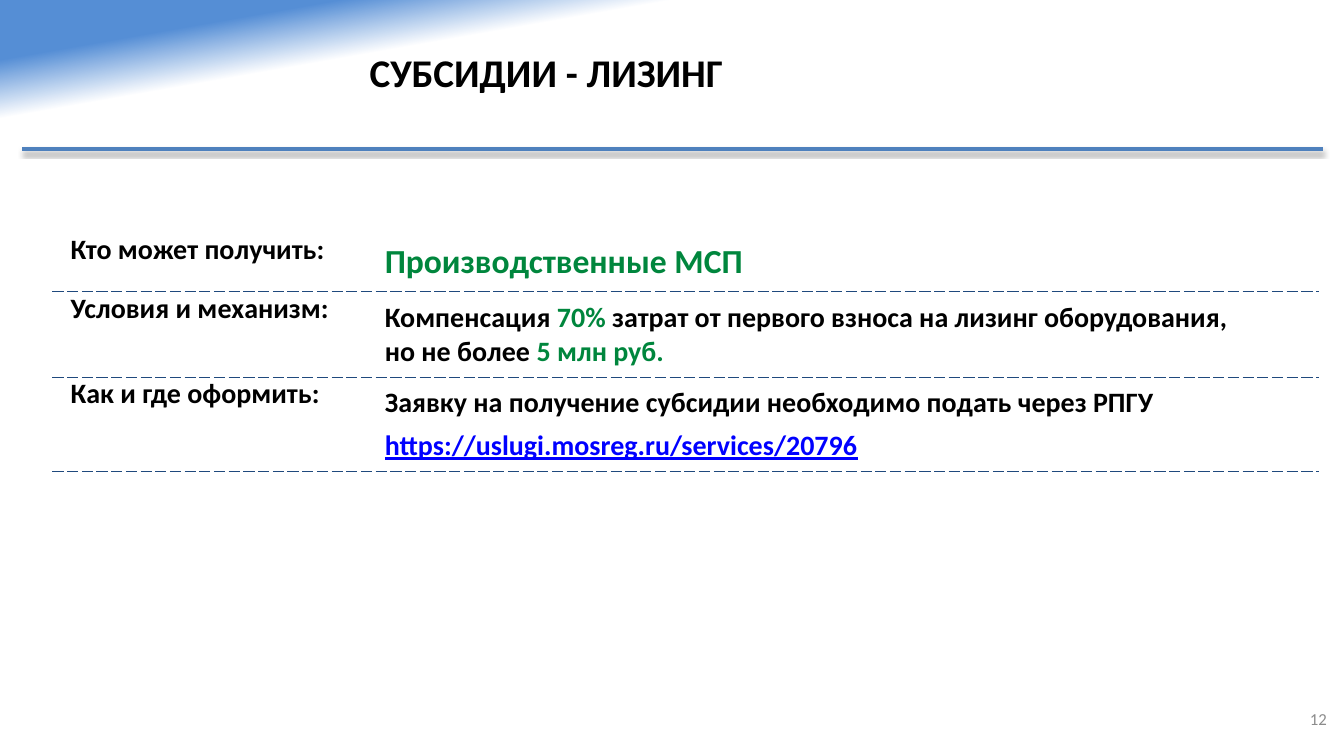
import dataclasses

import lxml.etree
import pptx
import pptx.dml.color
import pptx.enum.dml
import pptx.enum.shapes
import pptx.enum.text
import pptx.oxml.ns
import pptx.util

Cm = pptx.util.Cm
Pt = pptx.util.Pt
Align = pptx.enum.text.PP_ALIGN
Anchor = pptx.enum.text.MSO_ANCHOR
qn = pptx.oxml.ns.qn

BLACK, GREEN, LINK, NAVY = "000000", "00863D", "0000FF", "1F497D"


@dataclasses.dataclass
class Run:
    text: str
    color: str = BLACK
    under: bool = False


@dataclasses.dataclass
class Para:
    runs: list[Run]
    size: float = 20
    bold: bool = True
    align: Align = Align.LEFT
    before: float = 0
    line: float | None = None


@dataclasses.dataclass
class Box:
    left: float
    top: float
    width: float
    height: float
    inset: tuple[float, float]
    anchor: Anchor
    para: Para


@dataclasses.dataclass
class Row:
    height: float
    label: str
    paras: list[Para]


def rgb(code: str) -> pptx.dml.color.RGBColor:
    return pptx.dml.color.RGBColor.from_string(code)


def write(frame, paras: list[Para]) -> None:
    for i, item in enumerate(paras):
        p = frame.add_paragraph() if i else frame.paragraphs[0]
        p.alignment = item.align
        if item.before:
            p.space_before = Pt(item.before)
        if item.line:
            p.line_spacing = Pt(item.line)
        p.font.name = "Calibri"
        p.font.size = Pt(item.size)
        p.font.bold = item.bold
        for part in item.runs:
            run = p.add_run()
            run.text = part.text
            run.font.color.rgb = rgb(part.color)
            if part.under:
                run.font.underline = True


def draw_box(slide, box: Box) -> None:
    shape = slide.shapes.add_textbox(
        Cm(box.left), Cm(box.top), Cm(box.width), Cm(box.height))
    frame = shape.text_frame
    frame.word_wrap = True
    frame.vertical_anchor = box.anchor
    frame.margin_left = frame.margin_right = Cm(box.inset[0])
    frame.margin_top = frame.margin_bottom = Cm(box.inset[1])
    write(frame, [box.para])


def add_node(parent, tag: str, **attrs: str):
    return lxml.etree.SubElement(parent, qn(tag), attrs)


def set_edges(cell, first: bool) -> None:
    props = cell._tc.get_or_add_tcPr()
    for i, side in enumerate("LRTB"):
        edge = add_node(props, f"a:ln{side}", w=str(Pt(0.5)))
        if side == "B" or (side == "T" and not first):
            fill = add_node(edge, "a:solidFill")
            add_node(fill, "a:srgbClr", val=NAVY)
            add_node(edge, "a:prstDash", val="dash")
        else:
            add_node(edge, "a:noFill")
        props.insert(i, edge)


def draw_table(slide, rows: list[Row]) -> None:
    widths = (7.92, 24)
    frame = slide.shapes.add_table(
        len(rows), len(widths), Cm(1.32), Cm(5.87),
        Cm(sum(widths)), Cm(sum(row.height for row in rows)))
    table = frame.table
    table.first_row = table.horz_banding = False
    for col, width in zip(table.columns, widths):
        col.width = Cm(width)
    for i, row in enumerate(rows):
        table.rows[i].height = Cm(row.height)
        label = Para([Run(row.label)], align=Align.JUSTIFY, line=18)
        for j, paras in enumerate(([label], row.paras)):
            cell = table.cell(i, j)
            cell.margin_left = cell.margin_right = Cm(0.46)
            cell.margin_top = cell.margin_bottom = Cm(0.23)
            cell.fill.background()
            set_edges(cell, i == 0)
            write(cell.text_frame, paras)


def draw_rule(slide) -> None:
    rule = slide.shapes.add_connector(
        pptx.enum.shapes.MSO_CONNECTOR.STRAIGHT,
        Cm(0.56), Cm(3.76), Cm(33.35), Cm(3.76))
    rule.line.color.rgb = rgb("4F81BD")
    rule.line.width = Pt(3)
    effects = add_node(rule._element.spPr, "a:effectLst")
    shade = add_node(effects, "a:outerShdw", blurRad=str(Pt(3.1)),
                     dist=str(Pt(1.8)), dir="5400000", rotWithShape="0")
    add_node(add_node(shade, "a:srgbClr", val=BLACK), "a:alpha", val="35000")


def paint_back(slide) -> None:
    fill = slide.background.fill
    fill.gradient()
    fill.gradient_angle = 280
    stops = ((0.06, "558ED5"), (0.12, "FFFFFF"))
    for stop, (place, code) in zip(fill.gradient_stops, stops):
        stop.position = place
        stop.color.rgb = rgb(code)


BOXES = [
    # Page number
    Box(32.28, 17.6, 1.5, 1.02, (0.33, 0.18), Anchor.MIDDLE,
        Para([Run("12", "8C8C8C")], 12, False, Align.RIGHT)),
    # Title
    Box(4.55, 1.09, 18.44, 1.45, (0, 0.13), Anchor.TOP,
        Para([Run("СУБСИДИИ - ЛИЗИНГ")], 28, align=Align.CENTER)),
]

ROWS = [
    Row(1.24, "Кто может получить:",
        [Para([Run("Производственные МСП", GREEN)], 24)]),
    Row(2.03, "Условия и механизм:", [
        Para([Run("Компенсация "), Run("70%", GREEN),
              Run(" затрат от первого взноса на лизинг оборудования,")]),
        Para([Run("но не более "), Run("5 млн руб.", GREEN)]),
    ]),
    Row(2.31, "Как и где оформить:", [
        Para([Run("Заявку на получение субсидии необходимо подать через РПГУ")]),
        Para([Run("https://uslugi.mosreg.ru/services/20796", LINK, True)],
             before=6),
    ]),
]


def main() -> None:
    deck = pptx.Presentation()
    deck.slide_width, deck.slide_height = Cm(33.88), Cm(19)
    slide = deck.slides.add_slide(deck.slide_layouts[6])
    paint_back(slide)
    for box in BOXES:
        draw_box(slide, box)
    draw_table(slide, ROWS)
    draw_rule(slide)
    deck.save("out.pptx")


if __name__ == "__main__":
    main()
